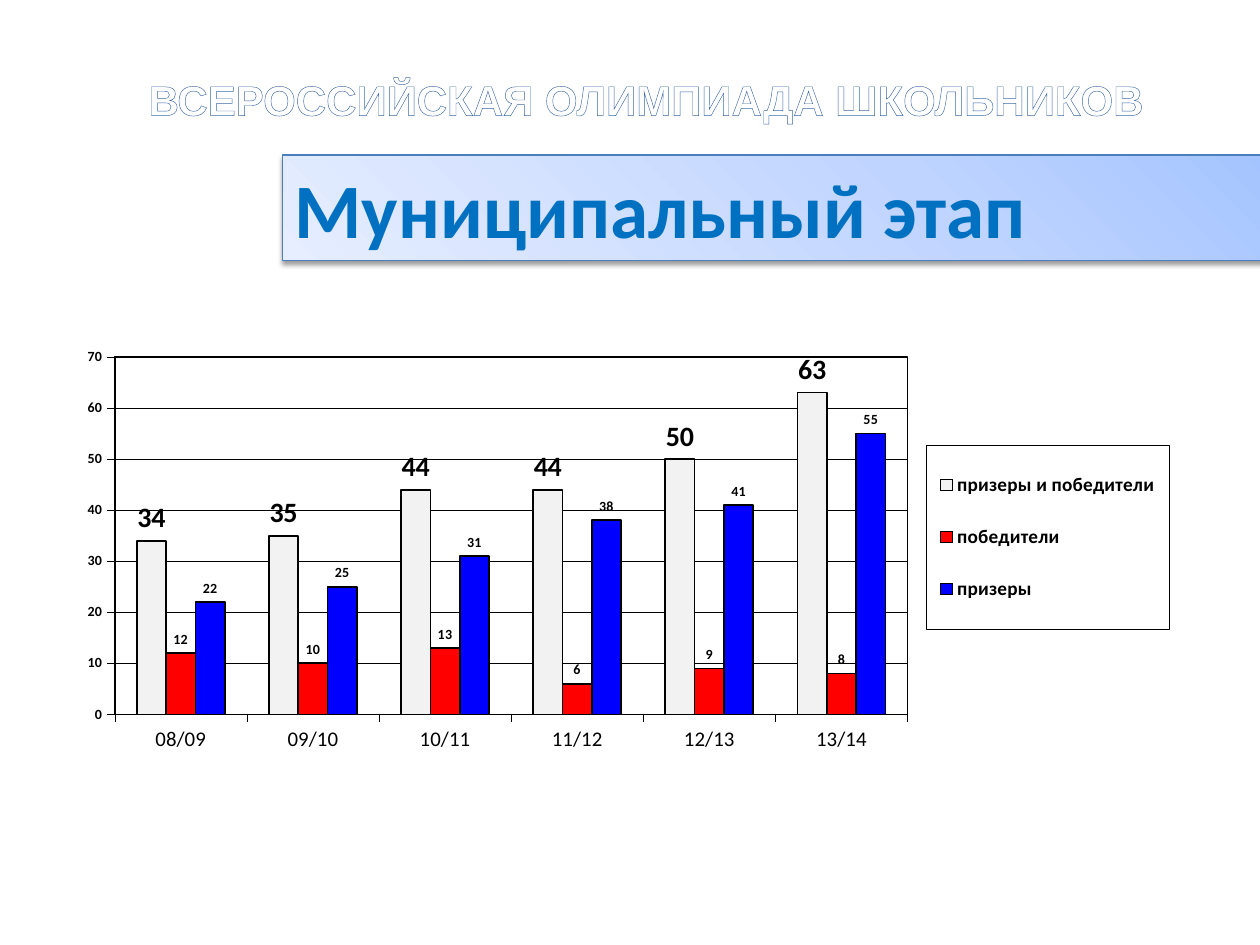
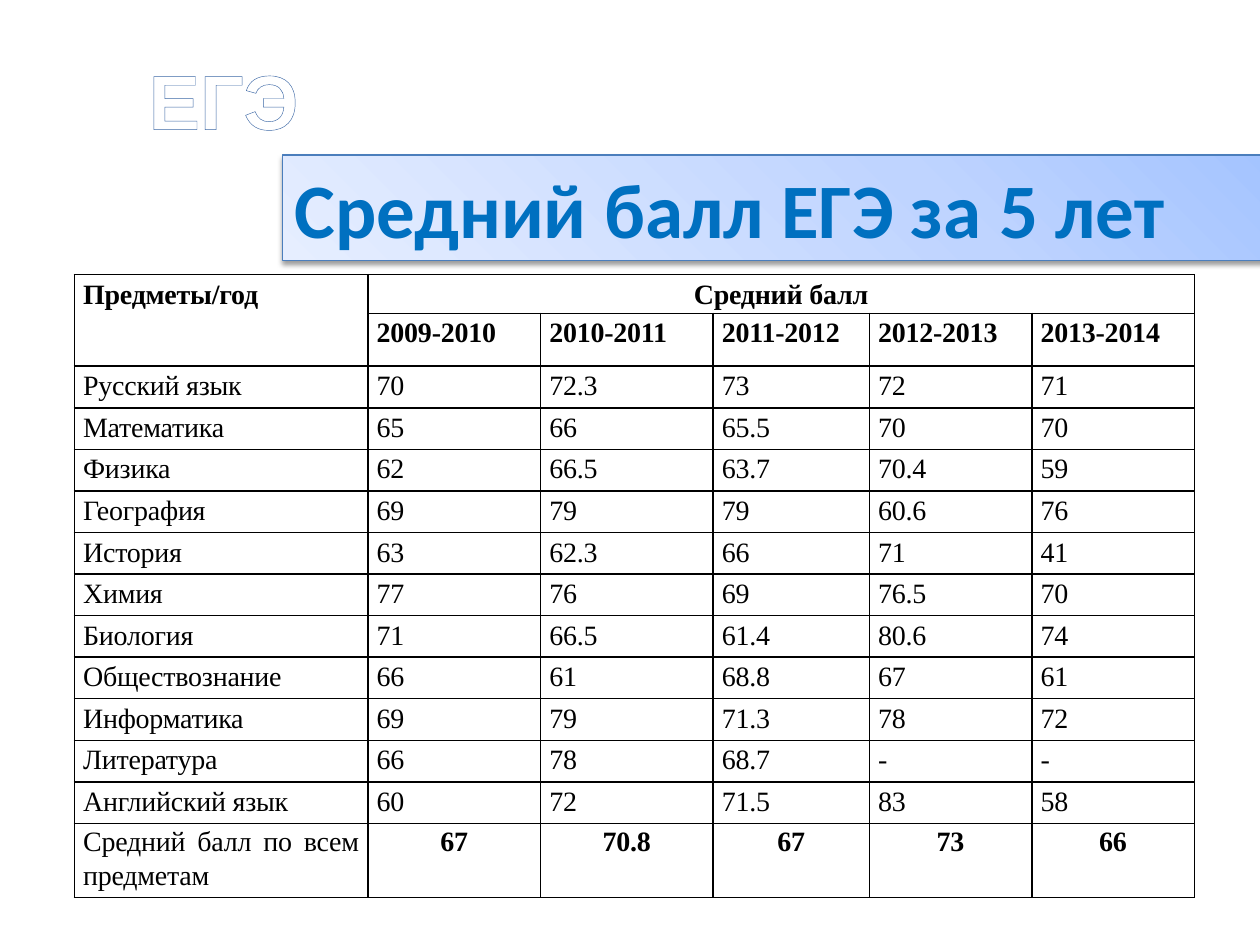
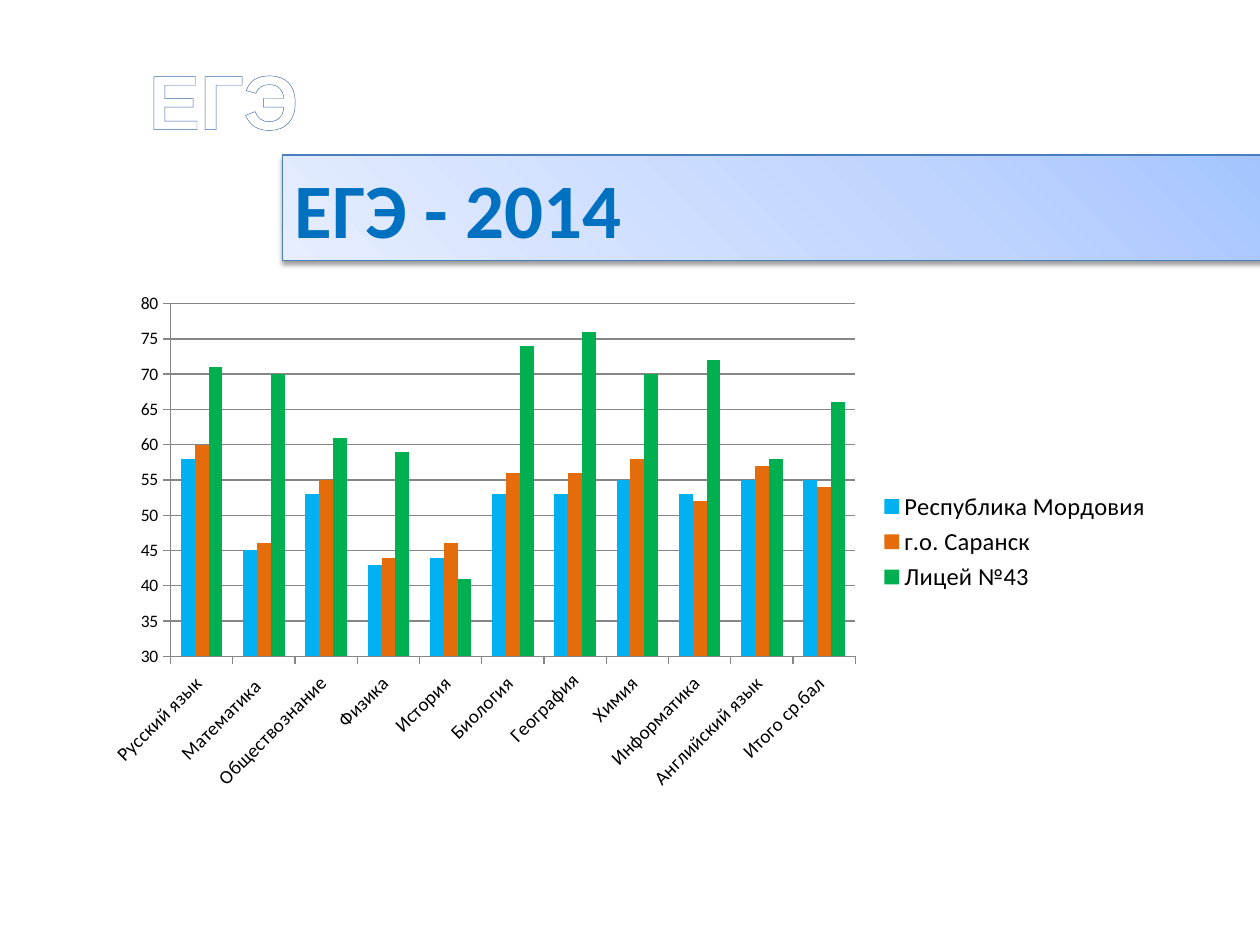
from dataclasses import dataclass
from typing import Optional

from lxml import etree
from pptx import Presentation
from pptx.chart.data import CategoryChartData
from pptx.dml.color import RGBColor
from pptx.enum.chart import XL_CHART_TYPE as ChartType
from pptx.enum.chart import XL_LABEL_POSITION as LabelPosition
from pptx.enum.chart import XL_LEGEND_POSITION as LegendPosition
from pptx.enum.chart import XL_TICK_MARK as TickMark
from pptx.enum.shapes import MSO_SHAPE as Shape
from pptx.enum.text import MSO_ANCHOR as Anchor
from pptx.enum.text import MSO_AUTO_SIZE as AutoSize
from pptx.enum.text import PP_ALIGN as Align
from pptx.oxml import parse_xml
from pptx.oxml.ns import nsdecls, qn
from pptx.util import Inches, Pt


@dataclass(frozen=True)
class Theme:
    black: str = "000000"
    white: str = "FFFFFF"
    title_outline: str = "3B67A5"
    banner_text: str = "0070C0"
    banner_outline: str = "00B0F0"
    banner_line: str = "4B7EBC"
    banner_stops: tuple = ((0, "A4C4FF"), (35, "BFD4FF"), (100, "E6EEFF"))
    chart_gray: str = "868686"
    title_font: str = "Arial"
    body_font: str = "Calibri"
    table_font: str = "Times New Roman"
    heading_size: float = 44
    long_title_size: float = 24
    table_size: float = 16


THEME = Theme()


@dataclass(frozen=True)
class Area:
    left: float
    top: float
    width: float
    height: float

    def lengths(self) -> tuple:
        return tuple(Inches(n) for n in (self.left, self.top, self.width, self.height))


@dataclass(frozen=True)
class Series:
    name: str
    color: str
    values: tuple
    label_size: Optional[float] = None


@dataclass(frozen=True)
class ColumnChart:
    area: Area
    plot: Area  # shares of the chart area
    categories: tuple
    series: tuple
    minimum: float
    maximum: float
    step: float
    size: float
    category_size: float
    legend_size: float
    line_color: str
    line_width: float
    bold: bool = False
    category_angle: int = 0
    framed_legend: Optional[Area] = None


TITLE_AREA = Area(1.08, 0.16, 8.64, 1.25)
BANNER_AREA = Area(2.24, 1.23, 7.86, 0.84)
TABLE_AREA = Area(0.59, 2.18, 8.9, 4.95)

STAGE_CHART = ColumnChart(
    area=Area(0.43, 2.33, 8.9, 4.57),
    plot=Area(0.054, 0.11, 0.707, 0.621),
    categories=("08/09", "09/10", "10/11", "11/12", "12/13", "13/14"),
    series=(
        Series("призеры и победители", "F2F2F2", (34, 35, 44, 44, 50, 63), 16),
        Series("победители", "FF0000", (12, 10, 13, 6, 9, 8), 8),
        Series("призеры", "0000FF", (22, 25, 31, 38, 41, 55), 8),
    ),
    minimum=0, maximum=70, step=10,
    size=8, category_size=11.9, legend_size=11, bold=True,
    line_color=THEME.black, line_width=0.25,
    framed_legend=Area(0.778, 0.263, 0.216, 0.32),
)

EXAM_CHART = ColumnChart(
    area=Area(0.72, 2.25, 8.56, 4.1),
    plot=Area(0.074, 0.039, 0.635, 0.683),
    categories=("Русский язык ", "Математика  ", "Обществознание ", "Физика ", "История ",
                "Биология ", "География", "Химия ", "Информатика ", "Английский язык ",
                "Итого ср.бал "),
    series=(
        Series("Республика Мордовия ", "00B0F0", (58, 45, 53, 43, 44, 53, 53, 55, 53, 55, 55)),
        Series("г.о. Саранск ", "E46C0A", (60, 46, 55, 44, 46, 56, 56, 58, 52, 57, 54)),
        Series("Лицей №43 ", "00B050", (71, 70, 61, 59, 41, 74, 76, 70, 72, 58, 66)),
    ),
    minimum=30, maximum=80, step=5,
    size=10, category_size=11, legend_size=14,
    line_color=THEME.chart_gray, line_width=0.75, category_angle=-45,
)

YEARS = ("2009-2010", "2010-2011", "2011-2012", "2012-2013", "2013-2014")
SCORES = (
    ("Русский язык", "70", "72.3", "73", "72", "71"),
    ("Математика", "65", "66", "65.5", "70", "70"),
    ("Физика", "62", "66.5", "63.7", "70.4", "59"),
    ("География", "69", "79", "79", "60.6", "76"),
    ("История", "63", "62.3", "66", "71", "41"),
    ("Химия", "77", "76", "69", "76.5", "70"),
    ("Биология", "71", "66.5", "61.4", "80.6", "74"),
    ("Обществознание", "66", "61", "68.8", "67", "61"),
    ("Информатика", "69", "79", "71.3", "78", "72"),
    ("Литература", "66", "78", "68.7", "-", "-"),
    ("Английский язык", "60", "72", "71.5", "83", "58"),
)
AVERAGES = ("Средний балл по всем предметам", "67", "70.8", "67", "73", "66")
COLUMN_WIDTHS = (2.33, 1.37, 1.37, 1.24, 1.29, 1.29)
ROW_HEIGHTS = (0.29, 0.42) + (0.33,) * len(SCORES) + (0.58,)


def rgb(color: str) -> RGBColor:
    return RGBColor.from_string(color)


def solid(color: str) -> str:
    return f'<a:solidFill {nsdecls("a")}><a:srgbClr val="{color}"/></a:solidFill>'


def format_font(font, *, size: float, name: str = THEME.body_font,
                color: str = THEME.black, bold: bool = False) -> None:
    font.size, font.name, font.bold = Pt(size), name, bold
    font.color.rgb = rgb(color)


def write(frame, text: str, *, size: float, name: str = THEME.body_font,
          color: str = THEME.black, bold: bool = True, align=Align.LEFT,
          outline: str = "", outline_width: float = 0.5, letter_spacing: float = 0,
          line_spacing: Optional[float] = None, space_after: Optional[float] = None) -> None:
    para = frame.paragraphs[0]
    para.alignment = align
    if line_spacing is not None:
        para.line_spacing = line_spacing
    if space_after is not None:
        para.space_after = Pt(space_after)
    span = para.add_run()
    span.text = text
    format_font(span.font, size=size, name=name, color=color, bold=bold)
    if letter_spacing:
        span.font._element.set("spc", str(round(letter_spacing * 100)))
    if outline:
        span.font._element.insert(0, parse_xml(
            f'<a:ln {nsdecls("a")} w="{Pt(outline_width)}">{solid(outline)}</a:ln>'))


def add_banner(page, text: str) -> None:
    box = page.shapes.add_shape(Shape.RECTANGLE, *BANNER_AREA.lengths())
    box.line.color.rgb = rgb(THEME.banner_line)
    box.line.width = Pt(0.75)
    box.shadow.inherit = False
    properties = box._element.spPr
    stops = "".join(f'<a:gs pos="{position * 1000}"><a:srgbClr val="{color}"/></a:gs>'
                    for position, color in THEME.banner_stops)
    properties.find(qn("a:prstGeom")).addnext(parse_xml(
        f'<a:gradFill {nsdecls("a")} rotWithShape="1"><a:gsLst>{stops}</a:gsLst>'
        '<a:path path="circle"><a:fillToRect l="100000" b="100000"/></a:path></a:gradFill>'))
    properties.find(qn("a:effectLst")).append(parse_xml(
        f'<a:outerShdw {nsdecls("a")} blurRad="{Pt(3.1)}" dist="{Pt(1.6)}" dir="5400000" '
        f'rotWithShape="0"><a:srgbClr val="{THEME.black}"><a:alpha val="38000"/></a:srgbClr>'
        '</a:outerShdw>'))
    frame = box.text_frame
    frame.word_wrap = True
    frame.auto_size = AutoSize.SHAPE_TO_FIT_TEXT
    frame.vertical_anchor = Anchor.TOP
    write(frame, text, size=THEME.heading_size, color=THEME.banner_text,
          outline=THEME.banner_outline, outline_width=0.83)


def add_page(deck, title: str, banner: str, title_size: float = THEME.heading_size):
    page = deck.slides.add_slide(deck.slide_layouts[5])
    heading = page.shapes.title
    heading.left, heading.top, heading.width, heading.height = TITLE_AREA.lengths()
    heading.text_frame.vertical_anchor = Anchor.MIDDLE
    write(heading.text_frame, title, size=title_size, name=THEME.title_font,
          color=THEME.white, outline=THEME.title_outline)
    add_banner(page, banner)
    return page


def layout_xml(area: Area, inner: bool = False):
    target = '<c:layoutTarget val="inner"/>' if inner else ""
    return parse_xml(
        f'<c:layout {nsdecls("c")}><c:manualLayout>{target}'
        '<c:xMode val="edge"/><c:yMode val="edge"/>'
        f'<c:x val="{area.left}"/><c:y val="{area.top}"/>'
        f'<c:w val="{area.width}"/><c:h val="{area.height}"/></c:manualLayout></c:layout>')


def frame_xml(color: str, width: float):
    return parse_xml(f'<c:spPr {nsdecls("c", "a")}><a:noFill/>'
                     f'<a:ln w="{Pt(width)}">{solid(color)}</a:ln></c:spPr>')


def format_axis(axis, design: ColumnChart, size: float, bold: bool) -> None:
    axis.major_tick_mark, axis.minor_tick_mark = TickMark.OUTSIDE, TickMark.NONE
    axis.format.line.color.rgb = rgb(design.line_color)
    axis.format.line.width = Pt(design.line_width)
    format_font(axis.tick_labels.font, size=size, bold=bold)


def add_column_chart(page, design: ColumnChart) -> None:
    data = CategoryChartData()
    data.categories = design.categories
    for item in design.series:
        data.add_series(item.name, item.values)
    chart = page.shapes.add_chart(ChartType.COLUMN_CLUSTERED, *design.area.lengths(), data).chart
    chart.has_title = False
    format_font(chart.font, size=design.size, bold=design.bold)

    plot = chart.plots[0]
    plot.vary_by_categories = False
    plot.gap_width, plot.overlap = 150, 0
    for item, drawn in zip(design.series, plot.series):
        drawn.format.fill.solid()
        drawn.format.fill.fore_color.rgb = rgb(item.color)
        drawn.invert_if_negative = False
        if item.label_size:
            drawn.format.line.color.rgb = rgb(THEME.black)
            drawn.format.line.width = Pt(1)
            labels = drawn.data_labels
            labels.show_value = True
            labels.position = LabelPosition.OUTSIDE_END
            format_font(labels.font, size=item.label_size, bold=True)

    values, categories = chart.value_axis, chart.category_axis
    format_axis(values, design, design.size, design.bold)
    format_axis(categories, design, design.category_size, False)
    values.minimum_scale, values.maximum_scale = design.minimum, design.maximum
    values.major_unit = design.step
    values.has_major_gridlines = True
    grid = values.major_gridlines.format.line
    grid.color.rgb, grid.width = rgb(design.line_color), Pt(design.line_width)
    if design.category_angle:
        body = categories._element.find(qn("c:txPr")).find(qn("a:bodyPr"))
        body.set("rot", str(design.category_angle * 60000))
        body.set("vert", "horz")

    chart.has_legend = True
    legend = chart.legend
    legend.position = LegendPosition.RIGHT
    legend.include_in_layout = False
    format_font(legend.font, size=design.legend_size, bold=design.bold)

    plot_area = chart._chartSpace.chart.plotArea
    for old in plot_area.findall(qn("c:layout")):
        plot_area.remove(old)
    plot_area.insert(0, layout_xml(design.plot, inner=True))
    if design.framed_legend:
        plot_area.append(frame_xml(THEME.black, 0.75))
        element = legend._element
        for old in element.findall(qn("c:layout")):
            element.remove(old)
        element.find(qn("c:legendPos")).addnext(layout_xml(design.framed_legend))
        element.find(qn("c:overlay")).addnext(frame_xml(THEME.black, 0.25))


def format_cell(cell) -> None:
    cell.margin_left = cell.margin_right = Inches(0.07)
    cell.margin_top = cell.margin_bottom = 0
    cell.vertical_anchor = Anchor.TOP
    properties = cell._tc.get_or_add_tcPr()
    for side in ("lnL", "lnR", "lnT", "lnB"):
        line = etree.SubElement(properties, qn(f"a:{side}"), w=str(Pt(1)))
        line.append(parse_xml(solid(THEME.black)))
    cell.fill.background()


def add_score_table(page) -> None:
    table = page.shapes.add_table(
        len(ROW_HEIGHTS), len(COLUMN_WIDTHS), *TABLE_AREA.lengths()).table
    table.first_row = table.horz_banding = False
    for column, width in zip(table.columns, COLUMN_WIDTHS):
        column.width = Inches(width)
    for row, height in zip(table.rows, ROW_HEIGHTS):
        row.height = Inches(height)
    table.cell(0, 0).merge(table.cell(1, 0))
    table.cell(0, 1).merge(table.cell(0, len(YEARS)))

    last = len(ROW_HEIGHTS) - 1
    heading = ("Предметы/год", "Средний балл", "", "", "", "")
    for r, texts in enumerate((heading, ("",) + YEARS) + SCORES + (AVERAGES,)):
        for c, text in enumerate(texts):
            cell = table.cell(r, c)
            format_cell(cell)
            if c and r in (0, last):
                align = Align.CENTER
            else:
                align = Align.JUSTIFY if c == 0 or r == 1 else Align.LEFT
            # Covered cells keep the type size too, so that they do not stretch their row.
            write(cell.text_frame, text, size=THEME.table_size, name=THEME.table_font,
                  bold=r < 2 or (r == last and c > 0), align=align, letter_spacing=-0.1,
                  line_spacing=1.1 if r == last else 1.15, space_after=10)


def main() -> None:
    deck = Presentation()
    deck.slide_width, deck.slide_height = Inches(10), Inches(7.5)

    page = add_page(deck, "ВСЕРОССИЙСКАЯ ОЛИМПИАДА ШКОЛЬНИКОВ", "Муниципальный этап",
                    THEME.long_title_size)
    add_column_chart(page, STAGE_CHART)
    add_score_table(add_page(deck, "ЕГЭ", "Средний балл ЕГЭ за 5 лет"))
    add_column_chart(add_page(deck, "ЕГЭ", "ЕГЭ - 2014"), EXAM_CHART)

    deck.save("out.pptx")


if __name__ == "__main__":
    main()
